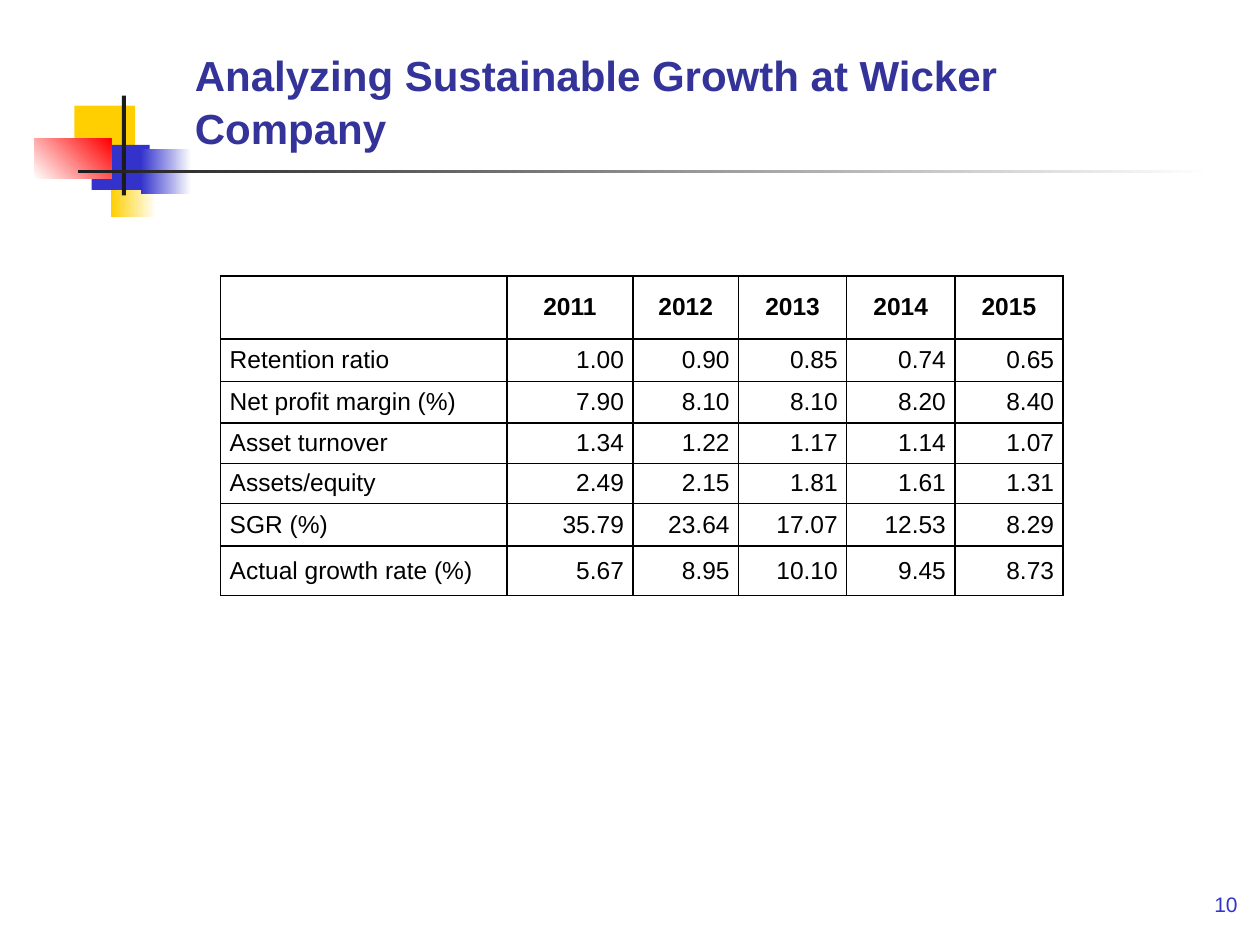
import dataclasses

import lxml.etree
import pptx
import pptx.dml.color
import pptx.enum.shapes
import pptx.enum.text
import pptx.oxml.ns
import pptx.util

Cm = pptx.util.Cm
ALIGN = pptx.enum.text.PP_ALIGN
ANCHOR = pptx.enum.text.MSO_ANCHOR


@dataclasses.dataclass(frozen=True)
class Theme:
    font: str = "Arial"
    yellow: str = "FFCF01"
    blue: str = "3333CC"
    red: str = "FF0000"
    white: str = "FFFFFF"
    dark: str = "1C1C1C"
    title: str = "333399"
    black: str = "000000"
    title_size: int = 24
    table_size: int = 14
    number_size: int = 12


theme = Theme()


def rgb(value):
    return pptx.dml.color.RGBColor.from_string(value)


def write_text(frame, text, *, size, color, bold=False, align=ALIGN.LEFT, line_spacing=None):
    frame.word_wrap = True
    paragraph = frame.paragraphs[0]
    paragraph.alignment = align
    paragraph.line_spacing = line_spacing
    run = paragraph.add_run()
    run.text = text
    run.font.name = theme.font
    run.font.size = pptx.util.Pt(size)
    run.font.bold = bold
    run.font.color.rgb = rgb(color)


presentation = pptx.Presentation()
presentation.slide_width = Cm(25.4)
presentation.slide_height = Cm(19.05)
slide = presentation.slides.add_slide(presentation.slide_layouts[6])

# Corner ornament: left, top, width, height, colours (two make a gradient), angle
ornament = [
    (2.24, 3.05, 0.91, 1.32, (theme.yellow, theme.white), 0),
    (1.5, 2.13, 1.22, 0.89, (theme.yellow,), 0),
    (1.85, 2.92, 1.17, 0.91, (theme.blue,), 0),
    (2.84, 3.0, 1.02, 0.91, (theme.blue, theme.white), 0),
    (0.69, 2.79, 1.55, 0.81, (theme.white, theme.red), 45),
    (2.46, 1.93, 0.08, 2.01, (theme.dark,), 0),
    (1.57, 3.43, 22.86, 0.06, (theme.dark, theme.white), 0),
]
for left, top, width, height, colors, angle in ornament:
    shape = slide.shapes.add_shape(
        pptx.enum.shapes.MSO_SHAPE.RECTANGLE, Cm(left), Cm(top), Cm(width), Cm(height))
    shape.shadow.inherit = False
    shape.line.fill.background()
    if len(colors) == 1:
        shape.fill.solid()
        shape.fill.fore_color.rgb = rgb(colors[0])
    else:
        shape.fill.gradient()
        shape.fill.gradient_angle = angle
        for stop, color in zip(shape.fill.gradient_stops, colors):
            stop.color.rgb = rgb(color)

# Title
title = slide.shapes.add_textbox(Cm(3.68), Cm(1.85), Cm(20.65), Cm(1.35))
title.text_frame.vertical_anchor = ANCHOR.BOTTOM
write_text(title.text_frame, "Analyzing Sustainable Growth at Wicker Company",
           size=theme.title_size, color=theme.title, bold=True, line_spacing=1.05)

# Slide number
number = slide.shapes.add_textbox(Cm(19.41), Cm(17.78), Cm(5.79), Cm(1.27))
number.text_frame.vertical_anchor = ANCHOR.BOTTOM
number.text_frame.margin_bottom = Cm(0.56)
write_text(number.text_frame, "10", size=theme.number_size, color=theme.blue, align=ALIGN.RIGHT)

# Growth table
rows = [
    ("", "2011", "2012", "2013", "2014", "2015"),
    ("Retention ratio", "1.00", "0.90", "0.85", "0.74", "0.65"),
    ("Net profit margin (%)", "7.90", "8.10", "8.10", "8.20", "8.40"),
    ("Asset turnover", "1.34", "1.22", "1.17", "1.14", "1.07"),
    ("Assets/equity", "2.49", "2.15", "1.81", "1.61", "1.31"),
    ("SGR (%)", "35.79", "23.64", "17.07", "12.53", "8.29"),
    ("Actual growth rate (%)", "5.67", "8.95", "10.10", "9.45", "8.73"),
]
column_widths = [5.77, 2.54, 2.13, 2.18, 2.18, 2.18]
row_heights = [1.27, 0.86, 0.84, 0.81, 0.81, 0.86, 0.99]
table = slide.shapes.add_table(
    len(rows), len(column_widths), Cm(4.45), Cm(5.56),
    Cm(sum(column_widths)), Cm(sum(row_heights))).table
table.first_row = False
table.horz_banding = False
for column, width in zip(table.columns, column_widths):
    column.width = Cm(width)
for row, height in zip(table.rows, row_heights):
    row.height = Cm(height)

for row_index, values in enumerate(rows):
    for column_index, value in enumerate(values):
        cell = table.cell(row_index, column_index)
        cell.vertical_anchor = ANCHOR.MIDDLE
        cell.margin_left = cell.margin_right = Cm(0.18)
        cell.margin_top = cell.margin_bottom = 0
        # Borders come before the fill in the cell properties
        properties = cell._tc.get_or_add_tcPr()
        for side in ("a:lnL", "a:lnR", "a:lnT", "a:lnB"):
            border = lxml.etree.SubElement(
                properties, pptx.oxml.ns.qn(side), w=str(pptx.util.Pt(1)))
            line_fill = lxml.etree.SubElement(border, pptx.oxml.ns.qn("a:solidFill"))
            lxml.etree.SubElement(line_fill, pptx.oxml.ns.qn("a:srgbClr"), val=theme.black)
        cell.fill.background()
        if value:
            header = row_index == 0
            align = ALIGN.CENTER if header else ALIGN.RIGHT if column_index else ALIGN.LEFT
            write_text(cell.text_frame, value, size=theme.table_size,
                       color=theme.black, bold=header, align=align)

presentation.save("out.pptx")
